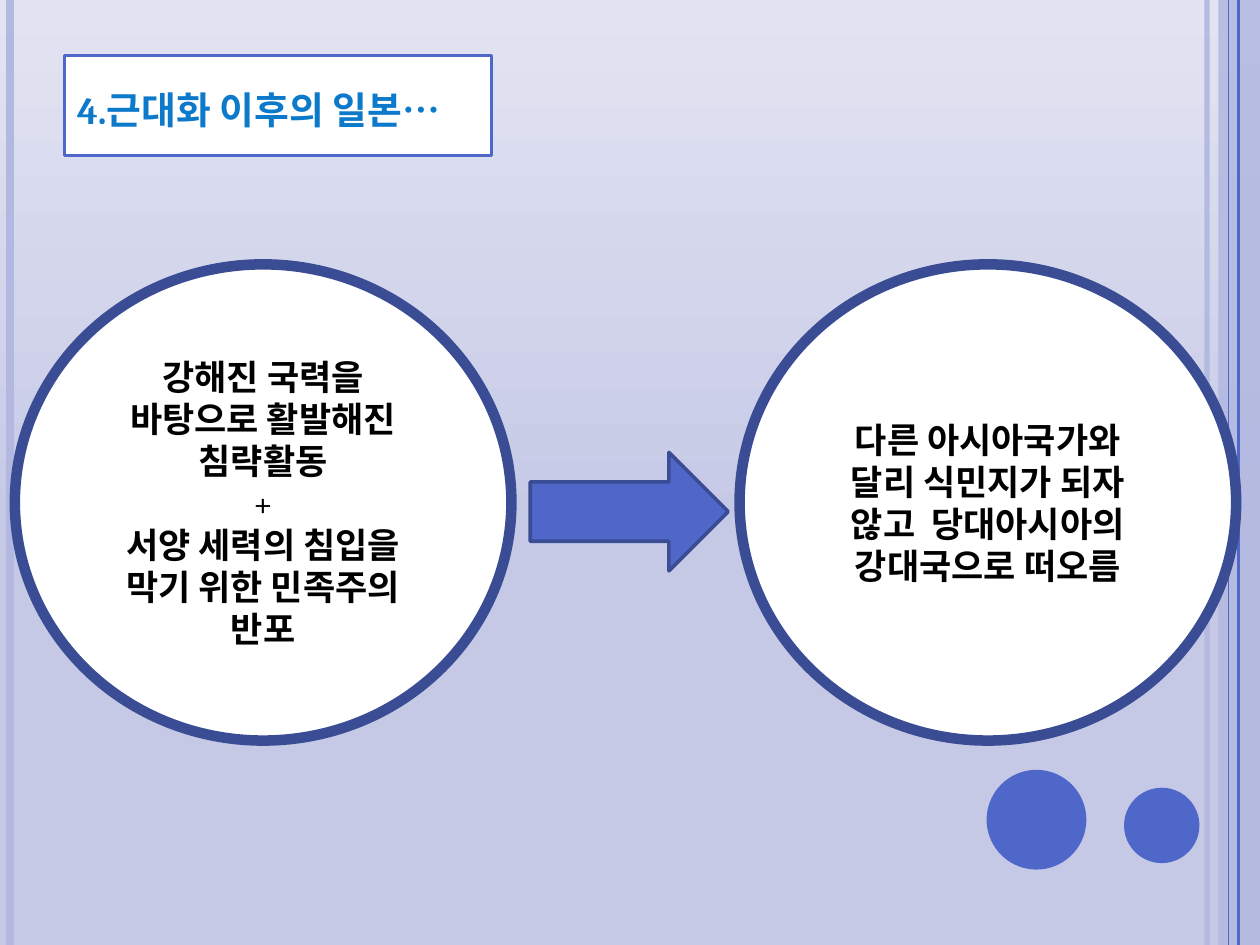
from lxml import etree
from pptx import Presentation
from pptx.dml.color import RGBColor
from pptx.enum.shapes import MSO_CONNECTOR, MSO_SHAPE
from pptx.enum.text import MSO_ANCHOR, MSO_AUTO_SIZE, PP_ALIGN
from pptx.oxml.ns import qn
from pptx.util import Cm, Pt

STRAIGHT = MSO_CONNECTOR.STRAIGHT
RECTANGLE, OVAL, ARROW = MSO_SHAPE.RECTANGLE, MSO_SHAPE.OVAL, MSO_SHAPE.RIGHT_ARROW
MIDDLE, NO_FIT = MSO_ANCHOR.MIDDLE, MSO_AUTO_SIZE.NONE
LEFT, CENTER = PP_ALIGN.LEFT, PP_ALIGN.CENTER

THEME = {
    "font": "Cambria", "title size": 27, "body size": 20,
    "title": "0D79CA", "text": "000000", "white": "FFFFFF",
    "accent": "4E67C8", "dark": "3A4C94", "pale": "B2B8E0",
    "sky top": "E3E4F2", "sky bottom": "C5C9E6",
}

# Lengths in centimetres
WIDTH, HEIGHT = 25.4, 19.05
TITLE = "4.근대화 이후의 일본…"
TITLE_AREA = (1.3, 1.12, 8.61, 2.01)
CAUSES = [  # text, bold
    ("강해진 국력을 바탕으로 활발해진 침략활동", True),
    ("+", False),
    ("서양 세력의 침입을 막기 위한 민족주의 반포", True),
]
RESULT = [("다른 아시아국가와 달리 식민지가 되자 않고  당대아시아의 강대국으로 떠오름", True)]
CIRCLES = [(0.3, CAUSES), (14.91, RESULT)]  # left, paragraphs
CIRCLE_TOP, CIRCLE_WIDTH, CIRCLE_HEIGHT = 5.33, 10.01, 9.6
ARROW_AREA = (10.69, 9.12, 3.99, 2.39)
EDGE_BAND = (24.56, 0, 0.84, HEIGHT)
EDGE_LINES = [  # x, colour, points, opacity in percent
    (24.33, "pale", 3, 93),
    (0.2, "pale", 4.5, 100),
    (24.97, "accent", 1.5, 100),
    (24.77, "accent", 0.75, 100),
]
DOTS = [(22.66, 15.88, 1.52), (19.89, 15.52, 2.01)]  # left, top, diameter


def color(name):
    return RGBColor.from_string(THEME[name])


def set_opacity(fill_owner, percent):
    for tone in fill_owner.iter(qn("a:srgbClr")):
        etree.SubElement(tone, qn("a:alpha")).set("val", str(percent * 1000))


def paint(shape, fill, line=None, points=0):
    shape.fill.solid()
    shape.fill.fore_color.rgb = color(fill)
    if line:
        shape.line.color.rgb = color(line)
        shape.line.width = Pt(points)
    else:
        shape.line.fill.background()


def add_shape(slide, kind, area, fill, line=None, points=0):
    shape = slide.shapes.add_shape(kind, *map(Cm, area))
    shape.shadow.inherit = False
    paint(shape, fill, line, points)
    return shape


def write(shape, paragraphs, align, size, tone):
    frame = shape.text_frame
    frame.word_wrap = True
    frame.auto_size = NO_FIT
    frame.vertical_anchor = MIDDLE
    for index, (text, bold) in enumerate(paragraphs):
        para = frame.add_paragraph() if index else frame.paragraphs[0]
        para.alignment = align
        span = para.add_run()
        span.text = text
        span.font.name = THEME["font"]
        span.font.size = Pt(THEME[size])
        span.font.bold = bold
        span.font.color.rgb = color(tone)


def add_background(slide):
    fill = slide.background.fill
    fill.gradient()
    fill.gradient_angle = 90
    stops = [(0.44, "sky bottom"), (1, "sky top")]
    for stop, (position, tone) in zip(fill.gradient_stops, stops):
        stop.position = position
        stop.color.rgb = color(tone)


def add_edge_line(slide, x, tone, points, opacity):
    line = slide.shapes.add_connector(STRAIGHT, Cm(x), Cm(0), Cm(x), Cm(HEIGHT))
    line.line.color.rgb = color(tone)
    line.line.width = Pt(points)
    properties = line._element.spPr
    if opacity < 100:
        set_opacity(properties, opacity)
    etree.SubElement(properties, qn("a:effectLst"))


def add_title(slide):
    title = slide.shapes.title
    title.left, title.top, title.width, title.height = map(Cm, TITLE_AREA)
    paint(title, "white", "accent", 1.5)
    write(title, [(TITLE, True)], LEFT, "title size", "title")
    title.text_frame.paragraphs[0].runs[0].font._element.set("cap", "small")


def main():
    deck = Presentation()
    deck.slide_width, deck.slide_height = Cm(WIDTH), Cm(HEIGHT)
    slide = deck.slides.add_slide(deck.slide_layouts[5])

    add_background(slide)
    add_title(slide)
    band = add_shape(slide, RECTANGLE, EDGE_BAND, "pale")
    set_opacity(band._element.spPr, 87)
    for edge_line in EDGE_LINES:
        add_edge_line(slide, *edge_line)
    for left, top, diameter in DOTS:
        add_shape(slide, OVAL, (left, top, diameter, diameter), "accent")
    for left, paragraphs in CIRCLES:
        area = (left, CIRCLE_TOP, CIRCLE_WIDTH, CIRCLE_HEIGHT)
        circle = add_shape(slide, OVAL, area, "white", "dark", 6)
        write(circle, paragraphs, CENTER, "body size", "text")
    add_shape(slide, ARROW, ARROW_AREA, "accent", "dark", 2)

    deck.save("out.pptx")


if __name__ == "__main__":
    main()
